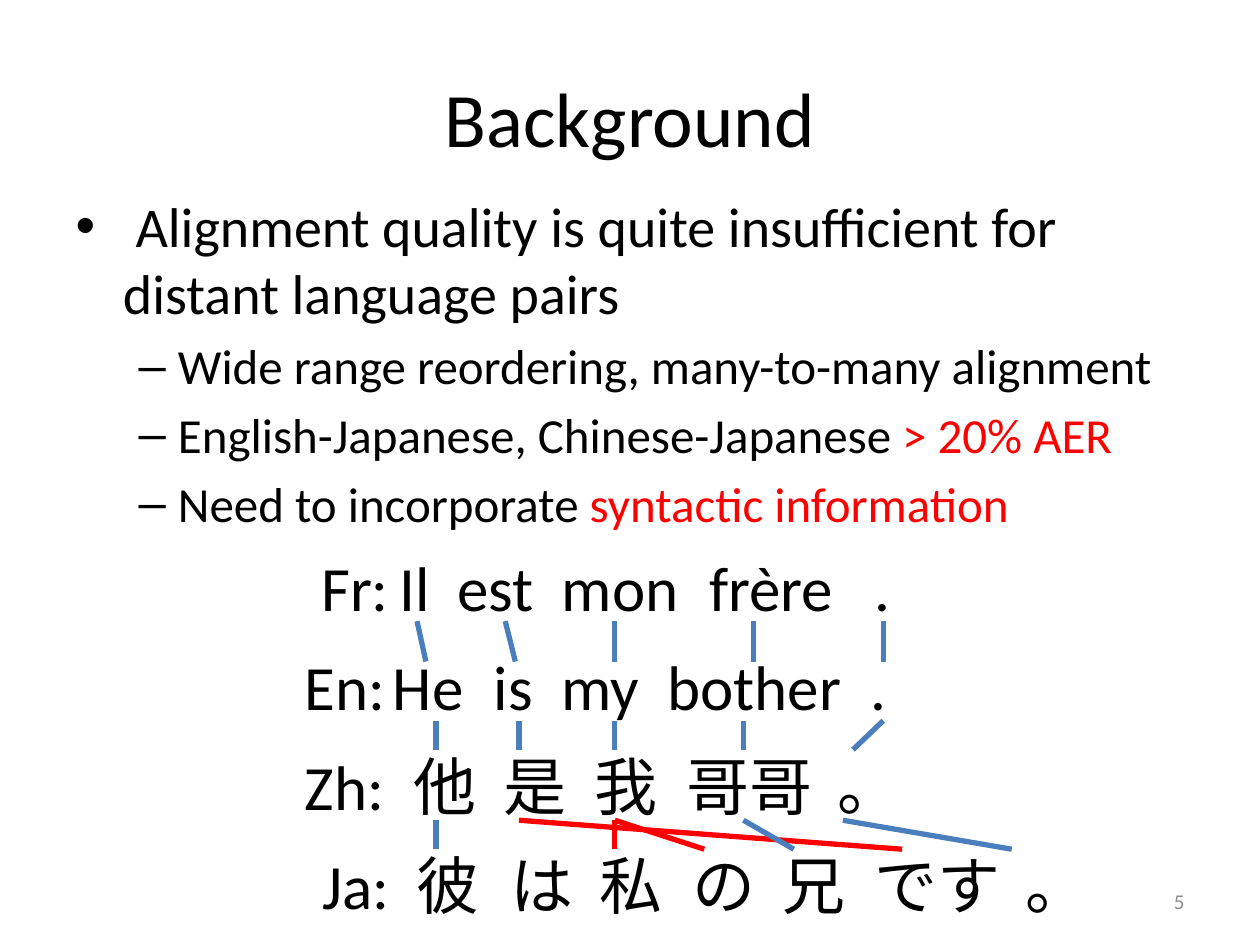
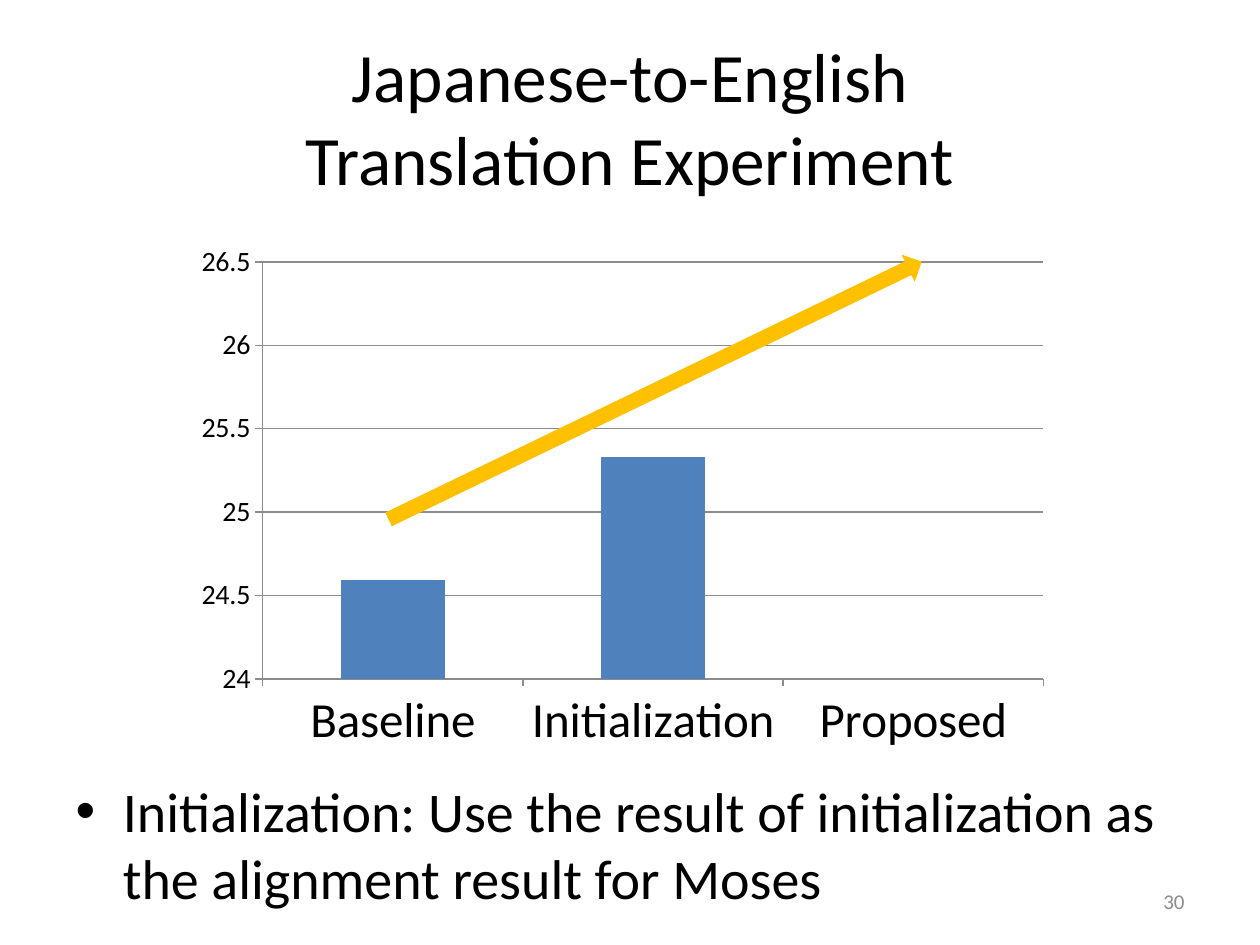
from dataclasses import dataclass

from lxml import etree
from pptx import Presentation
from pptx.chart.data import CategoryChartData
from pptx.dml.color import RGBColor as RGB
from pptx.enum.chart import XL_CHART_TYPE as ChartType, XL_TICK_MARK as Tick
from pptx.enum.shapes import MSO_CONNECTOR as Connector, MSO_SHAPE as Preset
from pptx.enum.text import MSO_ANCHOR as Anchor, MSO_AUTO_SIZE as AutoSize, PP_ALIGN as Align
from pptx.oxml.ns import qn
from pptx.util import Inches, Pt


@dataclass(frozen=True)
class Theme:
    font: str = "Calibri"
    ink: RGB = RGB(0, 0, 0)
    alert: RGB = RGB(0xFF, 0, 0)
    link: RGB = RGB(0x4B, 0x7E, 0xBC)
    bar: RGB = RGB(0x4F, 0x81, 0xBD)
    trend: RGB = RGB(0xFF, 0xC0, 0)
    muted: RGB = RGB(0x8C, 0x8C, 0x8C)
    title: float = 44
    long_title: float = 39.6
    sentence: float = 36
    bullets: tuple = (32, 28)
    category: float = 28
    scale: float = 16
    footer: float = 12


THEME = Theme()
TITLE_BOX = (0.5, 0.3, 9, 1.25)
NUMBER_BOX = (7.17, 6.95, 2.33, 0.4)

FINDINGS = [
    (0, [(" Alignment quality is quite insufficient for distant language pairs", THEME.ink)]),
    (1, [("Wide range reordering, many-to-many alignment", THEME.ink)]),
    (1, [("English-Japanese, Chinese-Japanese ", THEME.ink), ("> 20% AER", THEME.alert)]),
    (1, [("Need to incorporate ", THEME.ink), ("syntactic information", THEME.alert)]),
]

ROW_TOP, ROW_PITCH, ROW_HEIGHT = 4.3, 0.79, 0.71
LINK_OFFSET = 0.63
TEXT_INSET = 0.1
# Row left, row width, words, and the slide position where each word after the label starts
SENTENCES = [
    (2.45, 4.79, "Fr: Il est mon frère .", (3.17, 3.63, 4.46, 5.63, 6.94)),
    (2.32, 4.89, "En: He is my bother .", (3.12, 3.92, 4.46, 5.3, 6.91)),
    (2.32, 5.1, "Zh: 他 是 我 哥哥 。", (3.28, 4.0, 4.72, 5.45, 6.65)),
    (2.46, 6.4, "Ja: 彼 は 私 の 兄 です 。", (3.31, 4.05, 4.76, 5.5, 6.21, 6.94, 8.14)),
]
# Link height, then (upper x, lower x, colour) for each pair of neighbouring rows
ALIGNMENTS = [
    (0.32, [(3.31, 3.38, THEME.link), (4.01, 4.09, THEME.link), (4.88, 4.88, THEME.link),
            (5.98, 5.98, THEME.link), (7.01, 7.01, THEME.link)]),
    (0.23, [(3.46, 3.46, THEME.link), (4.12, 4.12, THEME.link), (4.88, 4.88, THEME.link),
            (5.9, 5.9, THEME.link), (7.01, 6.77, THEME.link)]),
    (0.23, [(3.46, 3.46, THEME.link), (4.12, 7.16, THEME.alert), (4.88, 4.88, THEME.alert),
            (5.9, 6.3, THEME.link), (6.69, 8.03, THEME.link), (4.88, 5.59, THEME.alert)]),
]


def inches(values):
    return [Inches(value) for value in values]


def assign(target, values):
    for name, value in values.items():
        setattr(target, name, value)


def style_font(font, size, color=THEME.ink):
    assign(font, {"name": THEME.font, "size": Pt(size)})
    font.color.rgb = color


def place(shape, box):
    assign(shape, dict(zip(("left", "top", "width", "height"), inches(box))))


def add_text(slide, box, text, size, color=THEME.ink, align=Align.LEFT, anchor=Anchor.TOP):
    frame = slide.shapes.add_textbox(*inches(box)).text_frame
    assign(frame, {"word_wrap": True, "vertical_anchor": anchor})
    line = frame.paragraphs[0]
    line.alignment = align
    run = line.add_run()
    run.text = text
    style_font(run.font, size, color)
    return line


def add_content_slide(deck, title, title_size, body_box, bullets, number):
    slide = deck.slides.add_slide(deck.slide_layouts[1])
    heading, body = slide.placeholders
    place(heading, TITLE_BOX)
    heading.text_frame.text = title
    assign(heading.text_frame, {"auto_size": AutoSize.NONE, "vertical_anchor": Anchor.MIDDLE})
    for run in heading.text_frame.paragraphs[0].runs:
        style_font(run.font, title_size)
    place(body, body_box)
    fill_bullets(body.text_frame, bullets)
    add_text(slide, NUMBER_BOX, number, THEME.footer, THEME.muted, Align.RIGHT, Anchor.MIDDLE)
    return slide


def fill_bullets(frame, bullets):
    frame.auto_size = AutoSize.NONE
    for index, (level, pieces) in enumerate(bullets):
        bullet = frame.add_paragraph() if index else frame.paragraphs[0]
        bullet.level = level
        for text, color in pieces:
            run = bullet.add_run()
            run.text = text
            style_font(run.font, THEME.bullets[level], color)


def add_sentence(slide, top, left, width, words, starts):
    """Set the words of one language on tab stops at the given slide positions."""
    line = add_text(slide, (left, top, width, ROW_HEIGHT), "\t".join(words.split()),
                    THEME.sentence)
    tabs = etree.SubElement(line._p.get_or_add_pPr(), qn("a:tabLst"))
    for start in starts:
        position = Inches(start - left - TEXT_INSET)
        etree.SubElement(tabs, qn("a:tab"), pos=str(position), algn="l")


def add_link(slide, start, end, color):
    link = slide.shapes.add_connector(Connector.STRAIGHT, *inches((*start, *end)))
    link.line.color.rgb = color
    link.line.width = Pt(3)
    etree.SubElement(link._element.spPr, qn("a:effectLst"))


def add_score_chart(slide, box):
    scores = CategoryChartData()
    scores.categories = ["Baseline", "Initialization", "Proposed"]
    scores.add_series("Series 1", (24.59, 25.33, None))
    chart = slide.shapes.add_chart(ChartType.COLUMN_CLUSTERED, *inches(box), scores).chart
    assign(chart, {"has_legend": False, "has_title": False})
    style_font(chart.font, 10)

    plot = chart.plots[0]
    assign(plot, {"gap_width": 150, "vary_by_categories": False})
    fill = plot.series[0].format.fill
    fill.solid()
    fill.fore_color.rgb = THEME.bar

    assign(chart.value_axis, {"minimum_scale": 24, "maximum_scale": 26.5, "major_unit": 0.5,
                              "has_major_gridlines": True})
    outlines = [chart.value_axis.major_gridlines.format.line]
    for axis, size in ((chart.category_axis, THEME.category), (chart.value_axis, THEME.scale)):
        assign(axis, {"major_tick_mark": Tick.OUTSIDE, "minor_tick_mark": Tick.NONE})
        style_font(axis.tick_labels.font, size)
        outlines.append(axis.format.line)
    for outline in outlines:
        outline.color.rgb = THEME.muted
        outline.width = Pt(0.75)


def add_trend_arrow(slide, box, rotation):
    arrow = slide.shapes.add_shape(Preset.RIGHT_ARROW, *inches(box))
    arrow.rotation = rotation
    arrow.shadow.inherit = False
    arrow.fill.solid()
    arrow.fill.fore_color.rgb = THEME.trend
    arrow.line.fill.background()


def build_background(deck):
    slide = add_content_slide(deck, "Background", THEME.title, (0.5, 1.47, 9, 2.94),
                              FINDINGS, "5")
    for row, sentence in enumerate(SENTENCES):
        add_sentence(slide, ROW_TOP + row * ROW_PITCH, *sentence)
    for row, (height, links) in enumerate(ALIGNMENTS):
        top = ROW_TOP + LINK_OFFSET + row * ROW_PITCH
        for upper, lower, color in links:
            add_link(slide, (upper, top), (lower, top + height), color)


def build_experiment(deck):
    note = "Initialization: Use the result of initialization as the alignment result for Moses"
    slide = add_content_slide(deck, "Japanese-to-English\vTranslation Experiment",
                              THEME.long_title, (0.5, 6.11, 9, 1.18),
                              [(0, [(note, THEME.ink)])], "30")
    add_score_chart(slide, (1.46, 1.86, 6.96, 4.18))
    add_trend_arrow(slide, (2.85, 2.98, 4.7, 0.24), 334.2)


def main():
    deck = Presentation()
    assign(deck, {"slide_width": Inches(10), "slide_height": Inches(7.5)})
    build_background(deck)
    build_experiment(deck)
    deck.save("out.pptx")


if __name__ == "__main__":
    main()
